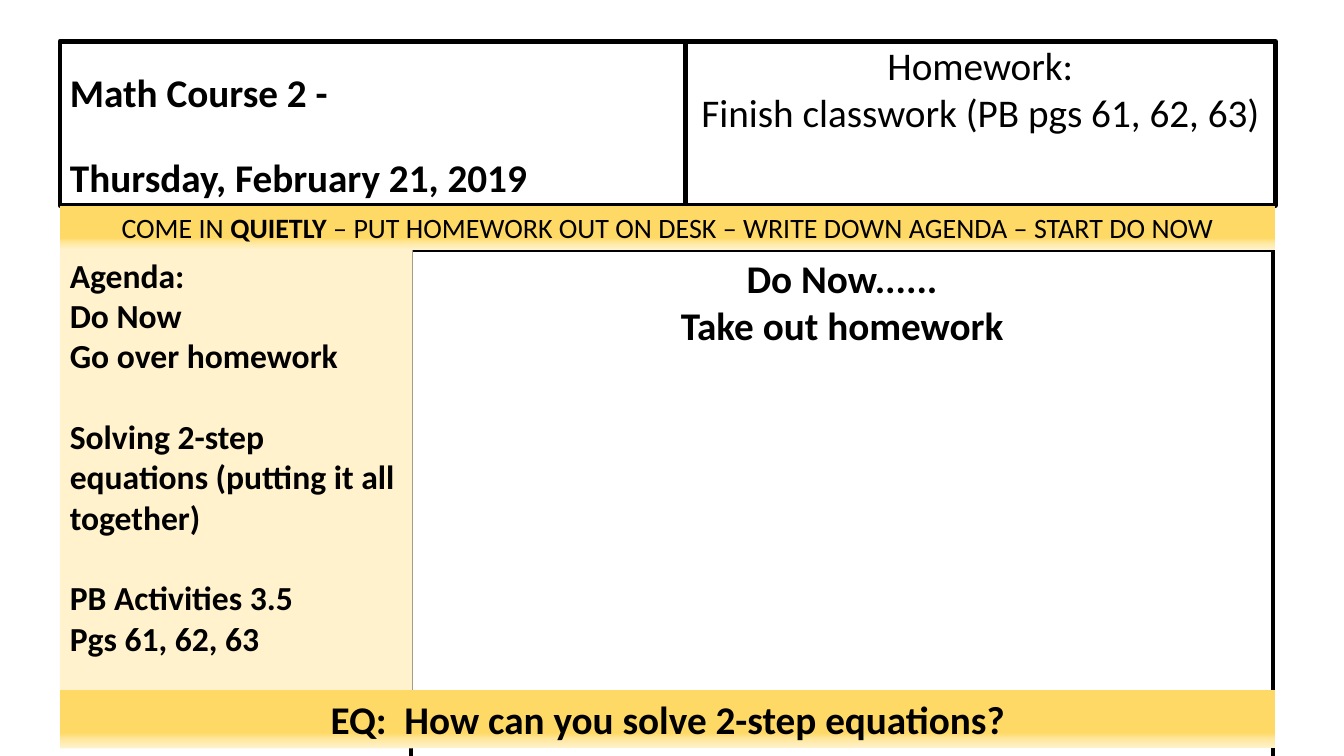
from lxml import etree
from pptx import Presentation
from pptx.dml.color import RGBColor
from pptx.enum.text import MSO_ANCHOR, MSO_AUTO_SIZE, PP_ALIGN
from pptx.oxml.ns import qn
from pptx.util import Cm, Pt

LEFT, CENTER = PP_ALIGN.LEFT, PP_ALIGN.CENTER
TOP, BOTTOM = MSO_ANCHOR.TOP, MSO_ANCHOR.BOTTOM
BLACK = RGBColor(0x00, 0x00, 0x00)
GOLD = RGBColor(0xFF, 0xD9, 0x66)
PALE_GOLD = RGBColor(0xFF, 0xE6, 0x99)
CREAM = RGBColor(0xFF, 0xF2, 0xCC)
BANNER_STOPS = [(0, GOLD), (74, GOLD), (83, PALE_GOLD), (100, CREAM)]

# Content: each line is (runs, space before in points, line spacing),
# each run is (text, bold)
COURSE = [([("Math Course 2 -", True)], 0, 0.9),
          ([("Thursday, February 21, 2019", True)], 30, 0.9)]
HOMEWORK = [([("Homework:", False)], 0, 0.9),
            ([("Finish classwork (PB pgs 61, 62, 63)", False)], 0, 1.0)]
DO_NOW = [([("Do Now......", True)], 0, 1.0),
          ([("Take out homework", True)], 0, 1.0)]
ENTRY = [([("COME IN ", False), ("QUIETLY", True),
           (" – PUT HOMEWORK OUT ON DESK – WRITE DOWN AGENDA – START DO NOW", False)],
          0, 1.0)]
AGENDA = [([(text, True)], before, 1.0) for text, before in [
    ("Agenda:", 0),
    ("Do Now", 0),
    ("Go over homework", 0),
    ("Solving 2-step equations (putting it all together)", 28.8),
    ("PB Activities 3.5", 28.8),
    ("Pgs 61, 62, 63", 0),
]]
QUESTION = [([("EQ:  How can you solve 2-step equations?", True)], 0, 1.0)]

# Page grid in centimetres
PAGE_LEFT, PAGE_WIDTH = 1.51, 30.63
HEADER_TOP, HEADER_HEIGHT = 1.04, 4.14
COURSE_WIDTH = 15.76
ENTRY_TOP = HEADER_TOP + HEADER_HEIGHT
ENTRY_HEIGHT = 1.11
BODY_TOP = ENTRY_TOP + ENTRY_HEIGHT
AGENDA_WIDTH = 8.89


def place(part, left, top, width, height):
    for side, length in dict(left=left, top=top, width=width, height=height).items():
        setattr(part, side, Cm(length))


def write(part, lines, size, align, anchor=TOP):
    frame = part.text_frame
    frame_format = dict(word_wrap=True, auto_size=MSO_AUTO_SIZE.NONE,
                        vertical_anchor=anchor)
    for name, value in frame_format.items():
        setattr(frame, name, value)
    for index, (runs, before, spacing) in enumerate(lines):
        line = frame.add_paragraph() if index else frame.paragraphs[0]
        line_format = dict(alignment=align, space_before=Pt(before),
                           space_after=Pt(0), line_spacing=spacing)
        for name, value in line_format.items():
            setattr(line, name, value)
        for text, bold in runs:
            run = line.add_run()
            run.text = text
            for name, value in dict(name="Calibri", size=Pt(size), bold=bold).items():
                setattr(run.font, name, value)
            run.font.color.rgb = BLACK


def outline(part):
    part.line.color.rgb = BLACK
    part.line.width = Pt(3.25)


def fill_banner(part):
    part.fill.gradient()
    part.fill.gradient_angle = 270
    stops = part._element.spPr.find(qn("a:gradFill")).find(qn("a:gsLst"))
    for stop in list(stops):
        stops.remove(stop)
    for percent, color in BANNER_STOPS:
        stop = etree.SubElement(stops, qn("a:gs"), pos=str(percent * 1000))
        etree.SubElement(stop, qn("a:srgbClr"), val=str(color))


def add_box(slide, left, top, width, height):
    return slide.shapes.add_textbox(Cm(left), Cm(top), Cm(width), Cm(height))


def main():
    deck = Presentation()
    deck.slide_width, deck.slide_height = Cm(33.87), Cm(19.05)
    slide = deck.slides.add_slide(deck.slide_layouts[0])

    # Header: course and date, homework
    course, homework = slide.shapes.title, slide.placeholders[1]
    place(course, PAGE_LEFT, HEADER_TOP, COURSE_WIDTH, HEADER_HEIGHT)
    place(homework, PAGE_LEFT + COURSE_WIDTH, HEADER_TOP,
          PAGE_WIDTH - COURSE_WIDTH, HEADER_HEIGHT)
    write(course, COURSE, 28, LEFT, BOTTOM)
    write(homework, HOMEWORK, 28, CENTER)

    # Do Now panel
    do_now = add_box(slide, 10.36, BODY_TOP, 21.72, 13.41)
    write(do_now, DO_NOW, 28, CENTER)
    for part in (course, homework, do_now):
        outline(part)

    # Entry instructions
    entry = add_box(slide, PAGE_LEFT, ENTRY_TOP, PAGE_WIDTH, ENTRY_HEIGHT)
    write(entry, ENTRY, 20, CENTER)

    # Agenda
    agenda = add_box(slide, PAGE_LEFT, BODY_TOP, AGENDA_WIDTH, 12.57)
    agenda.fill.solid()
    agenda.fill.fore_color.rgb = CREAM
    write(agenda, AGENDA, 24, LEFT)

    # Essential question
    question = add_box(slide, PAGE_LEFT, 17.4, PAGE_WIDTH, 1.45)
    write(question, QUESTION, 28, CENTER)
    for banner in (entry, question):
        fill_banner(banner)

    deck.save("out.pptx")


if __name__ == "__main__":
    main()
